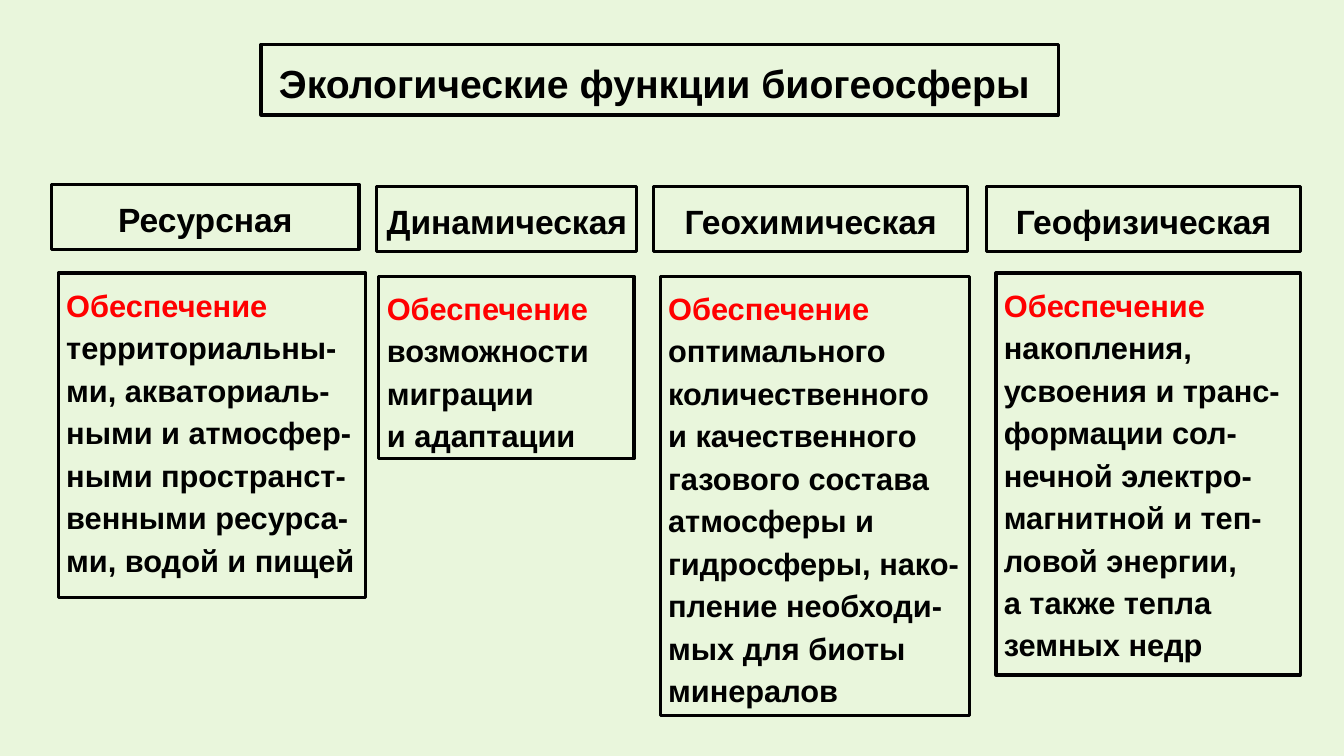
from pptx import Presentation
from pptx import util as u
from pptx.dml import color
from pptx.enum import shapes, text

BLACK, RED, PALE_GREEN = "000000", "FF0000", "E9F6DC"
LEAD = "Обеспечение"

FUNCTIONS = [
    ("Ресурсная", (1.3, 4.65, 7.75, 1.63), (1.47, 6.88, 7.75, 8.18),
     ["", "территориальны-ми, акваториаль-ными и атмосфер-ными "
          "пространст-венными ресурса-ми, водой и пищей"]),
    ("Динамическая", (9.5, 4.7, 6.55, 1.63), (9.55, 6.96, 6.43, 4.6),
     [" возможности миграции", "и адаптации"]),
    ("Геохимическая", (16.48, 4.7, 7.9, 1.63), (16.64, 6.96, 7.8, 11.07),
     [" оптимального количественного", "и качественного",
      "газового состава атмосферы и", "гидросферы, нако-",
      "пление необходи-мых для биоты", "минералов"]),
    ("Геофизическая", (24.87, 4.7, 7.9, 1.63), (25.1, 6.88, 7.67, 10.13),
     ["", "накопления,",
      "усвоения и транс- формации сол- нечной электро- магнитной и "
      "теп-ловой энергии,", "а также тепла", "земных недр"]),
]


def rgb(value):
    return color.RGBColor.from_string(value)


class Diagram:
    font = "Arial"
    inset = u.Cm(0.2)
    border = u.Pt(2.25)
    spacing = 1.15

    def __init__(self, slide):
        self.slide = slide

    def background(self, value):
        fill = self.slide.background.fill
        fill.solid()
        fill.fore_color.rgb = rgb(value)

    def box(self, place, paragraphs, size, align):
        frame = self.slide.shapes.add_shape(
            shapes.MSO_SHAPE.RECTANGLE, *map(u.Cm, place))
        frame.shadow.inherit = False
        frame.fill.background()
        frame.line.color.rgb = rgb(BLACK)
        frame.line.width = self.border
        body = frame.text_frame
        body.word_wrap = True
        body.vertical_anchor = text.MSO_ANCHOR.TOP
        body.margin_left = body.margin_right = self.inset
        body.margin_top = body.margin_bottom = self.inset
        for index, runs in enumerate(paragraphs):
            paragraph = body.add_paragraph() if index else body.paragraphs[0]
            paragraph.alignment = align
            paragraph.line_spacing = self.spacing
            for wording, shade in runs:
                self.run(paragraph, wording, size, shade)

    def run(self, paragraph, wording, size, shade):
        run = paragraph.add_run()
        run.text = wording
        run.font.name = self.font
        run.font.size = u.Pt(size)
        run.font.bold = True
        run.font.color.rgb = rgb(shade)

    def heading(self, place, wording, size):
        self.box(place, [[(wording, BLACK)]], size, text.PP_ALIGN.CENTER)

    def description(self, place, lines):
        first, *rest = lines
        opening = [(LEAD, RED)] + ([(first, BLACK)] if first else [])
        paragraphs = [opening] + [[(line, BLACK)] for line in rest]
        self.box(place, paragraphs, 22, text.PP_ALIGN.LEFT)


def main():
    deck = Presentation()
    deck.slide_width, deck.slide_height = u.Cm(33.87), u.Cm(19.05)
    diagram = Diagram(deck.slides.add_slide(deck.slide_layouts[6]))
    diagram.background(PALE_GREEN)
    diagram.heading((6.58, 1.12, 20.09, 1.78),
                    "Экологические функции биогеосферы ", 28)
    for name, name_place, role_place, role in FUNCTIONS:
        diagram.heading(name_place, name, 24)
        diagram.description(role_place, role)
    deck.save("out.pptx")


if __name__ == "__main__":
    main()
